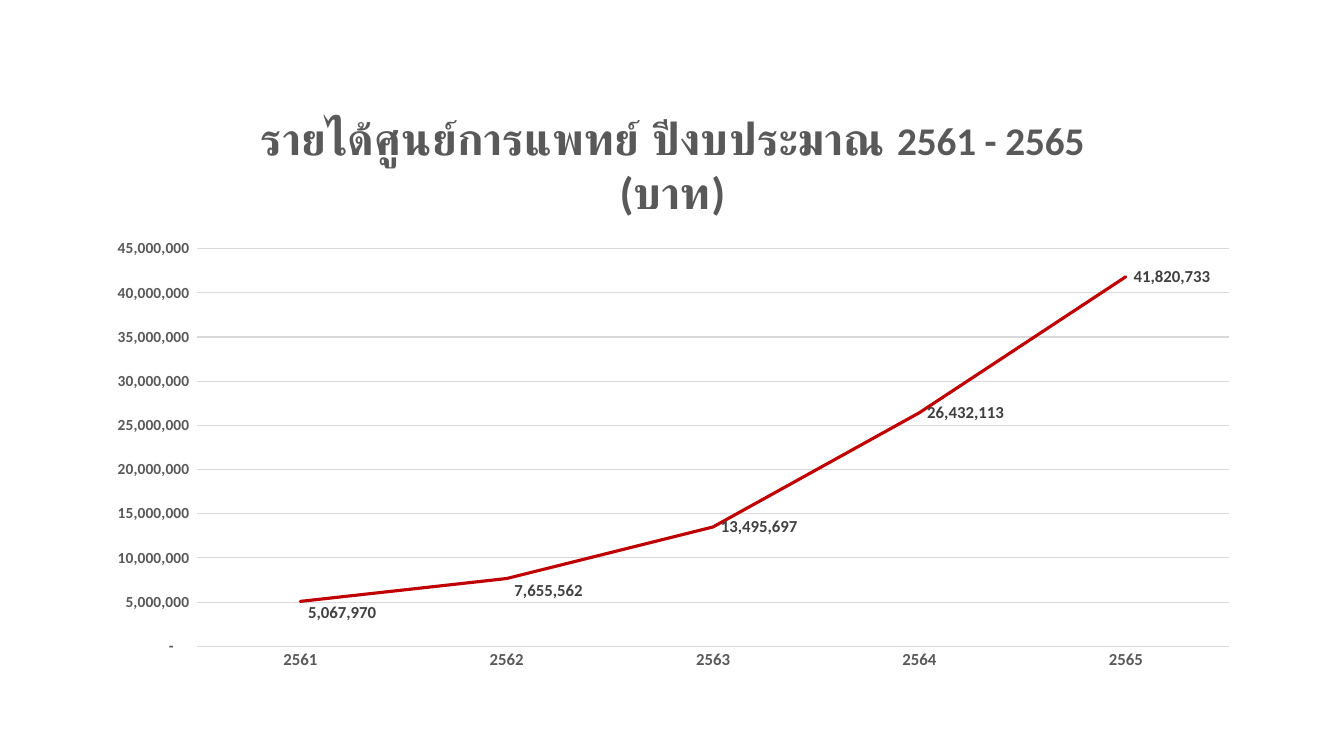
from dataclasses import dataclass

import pptx
import pptx.chart.data
import pptx.dml.color
import pptx.enum.chart
import pptx.oxml
import pptx.oxml.ns
import pptx.util
from pptx.util import Inches


@dataclass(frozen=True)
class Theme:
    font: str = "Calibri"
    text: str = "595959"
    label: str = "404040"
    grid: str = "D9D9D9"
    revenue: str = "C00000"
    thai_title_size: int = 32
    digit_title_size: int = 28
    label_size: int = 12
    value_size: int = 11
    thin_line: float = 0.75
    revenue_line: float = 2.25


THEME = Theme()
TITLE_RUNS = [
    ("รายได้ศูนย์การแพทย์ ปีงบประมาณ ", THEME.thai_title_size),
    ("2561 - 2565 ", THEME.digit_title_size),
    ("(บาท)", THEME.thai_title_size),
]
REVENUE = {
    "2561": 5067970,
    "2562": 7655562,
    "2563": 13495697,
    "2564": 26432113,
    "2565": 41820733,
}
NUMBER_FORMAT = '_(* #,##0_);_(* \\(#,##0\\);_(* "-"??_);_('


def style_font(font, size, color, bold=True):
    font.name = THEME.font
    font.size = pptx.util.Pt(size)
    font.bold = bold
    font.color.rgb = pptx.dml.color.RGBColor.from_string(color)


def add_text(paragraph, text, **font_format):
    run = paragraph.add_run()
    run.text = text
    style_font(run.font, **font_format)


def style_line(line, color, width):
    line.color.rgb = pptx.dml.color.RGBColor.from_string(color)
    line.width = pptx.util.Pt(width)


def make_layout(**settings):
    """Return a manual chart layout; settings are its elements in schema order."""
    items = "".join(f'<c:{name} val="{value}"/>' for name, value in settings.items())
    namespace = pptx.oxml.ns.nsdecls("c")
    return pptx.oxml.parse_xml(
        f"<c:layout {namespace}><c:manualLayout>{items}</c:manualLayout></c:layout>"
    )


def add_revenue_chart(slide):
    data = pptx.chart.data.CategoryChartData(number_format=NUMBER_FORMAT)
    data.categories = list(REVENUE)
    data.add_series("Series 1", list(REVENUE.values()))
    frame = slide.shapes.add_chart(
        pptx.enum.chart.XL_CHART_TYPE.LINE,
        Inches(0.92), Inches(0.96), Inches(11.5), Inches(5.8), data,
    )
    chart = frame.chart
    chart.has_legend = False
    style_font(chart.font, THEME.label_size, THEME.text, bold=False)
    return chart


def set_title(chart):
    chart.has_title = True
    chart.chart_title.include_in_layout = False
    paragraph = chart.chart_title.text_frame.paragraphs[0]
    for text, size in TITLE_RUNS:
        add_text(paragraph, text, size=size, color=THEME.text)


def place_plot_area(chart):
    plot_area = chart.plots[0]._element.getparent()
    for layout in plot_area.findall(pptx.oxml.ns.qn("c:layout")):
        plot_area.remove(layout)
    plot_area.insert(0, make_layout(
        layoutTarget="inner", xMode="edge", yMode="edge", x=0.09, y=0.26, w=0.89, h=0.68,
    ))


def style_axes(chart):
    no_ticks = pptx.enum.chart.XL_TICK_MARK.NONE
    sizes = ((chart.category_axis, THEME.label_size), (chart.value_axis, THEME.value_size))
    for axis, size in sizes:
        axis.major_tick_mark = axis.minor_tick_mark = no_ticks
        style_font(axis.tick_labels.font, size, THEME.text)
    style_line(chart.category_axis.format.line, THEME.grid, THEME.thin_line)

    value_axis = chart.value_axis
    value_axis.minimum_scale = 0
    value_axis.maximum_scale = 45_000_000
    value_axis.major_unit = 5_000_000
    value_axis.format.line.fill.background()
    style_line(value_axis.major_gridlines.format.line, THEME.grid, THEME.thin_line)
    value_axis.tick_labels.number_format = NUMBER_FORMAT
    value_axis.tick_labels.number_format_is_linked = False


def style_series(chart):
    chart.plots[0].vary_by_categories = False
    series = chart.plots[0].series[0]
    series.smooth = False
    series.marker.style = pptx.enum.chart.XL_MARKER_STYLE.NONE
    style_line(series.format.line, THEME.revenue, THEME.revenue_line)
    series.format.line._get_or_add_ln().set("cap", "rnd")

    right = pptx.enum.chart.XL_LABEL_POSITION.RIGHT
    labels = series.data_labels
    labels.show_value = True
    labels.position = right
    labels.number_format = NUMBER_FORMAT
    labels.number_format_is_linked = False
    style_font(labels.font, THEME.label_size, THEME.label)
    for point_index in (0, 1):
        label = series.points[point_index].data_label
        style_font(label.font, THEME.label_size, THEME.label)
        label.position = right
        element = labels._element.find(f"{{*}}dLbl[{point_index + 1}]")
        element.insert(1, make_layout(x=0, y=0.02))


def main():
    presentation = pptx.Presentation()
    presentation.slide_width = Inches(13.33)
    presentation.slide_height = Inches(7.5)
    slide = presentation.slides.add_slide(presentation.slide_layouts[6])
    chart = add_revenue_chart(slide)
    set_title(chart)
    place_plot_area(chart)
    style_axes(chart)
    style_series(chart)
    presentation.save("out.pptx")


if __name__ == "__main__":
    main()
